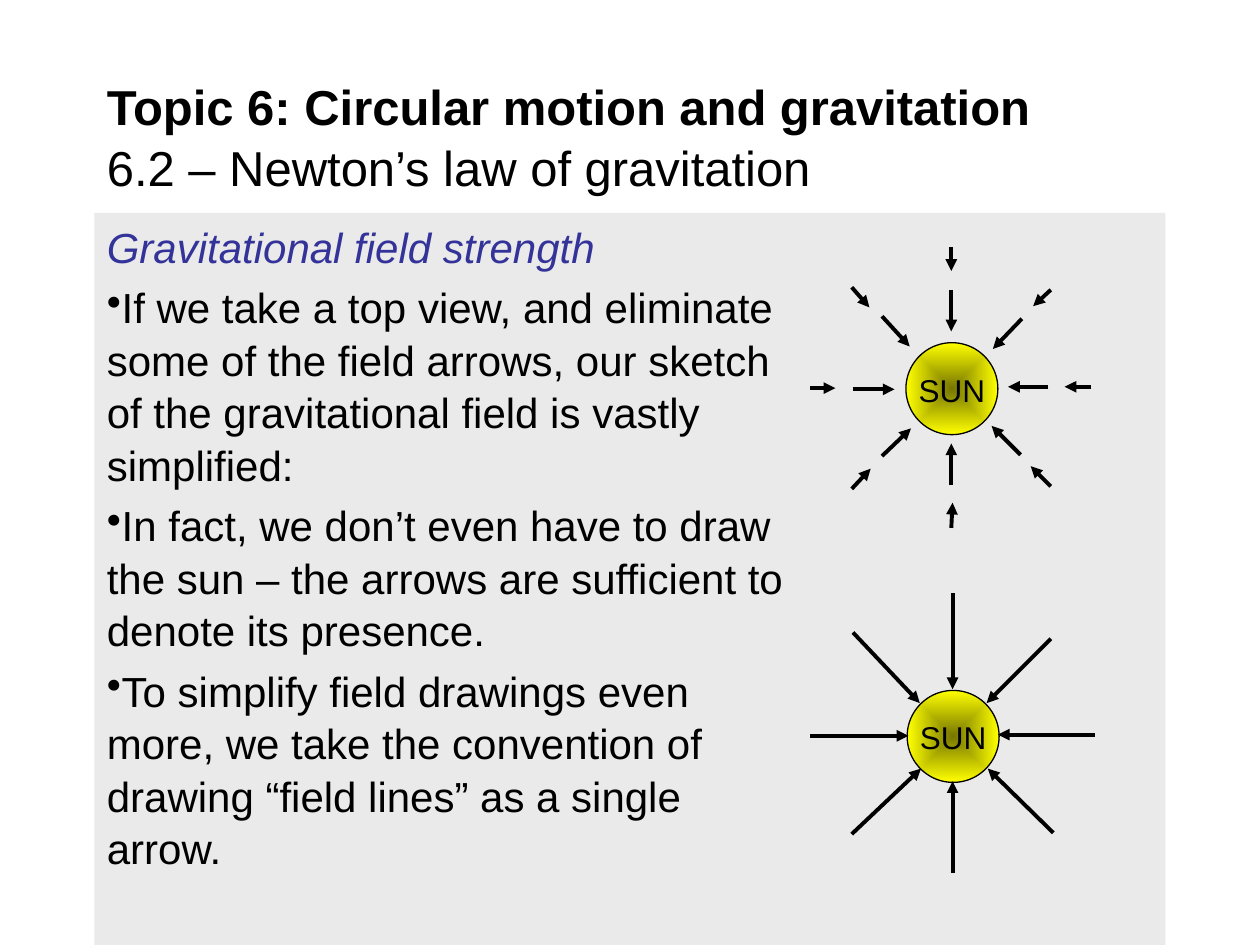
from lxml import etree
from pptx import Presentation
from pptx.dml.color import RGBColor
from pptx.enum.shapes import MSO_CONNECTOR, MSO_SHAPE
from pptx.enum.text import MSO_ANCHOR, PP_ALIGN
from pptx.oxml.ns import qn
from pptx.util import Inches, Pt

RECT, OVAL = MSO_SHAPE.RECTANGLE, MSO_SHAPE.OVAL
STRAIGHT = MSO_CONNECTOR.STRAIGHT
TOP, MIDDLE = MSO_ANCHOR.TOP, MSO_ANCHOR.MIDDLE
LEFT, CENTER = PP_ALIGN.LEFT, PP_ALIGN.CENTER

FONT = "Arial"
COLORS = {"black": "000000", "heading": "333399", "panel": "EAEAEA",
          "sun_core": "767600", "sun_edge": "FFFF00"}
LINE_SPACING = 1.04

TITLE = "Topic 6: Circular motion and gravitation"
SUBTITLE = "6.2 – Newton’s law of gravitation"
HEADING = "Gravitational field strength"
POINTS = [
    "If we take a top view, and eliminate some of the field arrows, "
    "our sketch of the gravitational field is vastly simplified:",
    "In fact, we don’t even have to draw the sun – the arrows are "
    "sufficient to denote its presence.",
    "To simplify field drawings even more, we take the convention of "
    "drawing “field lines” as a single arrow.",
]

# Arrows as (tail x, tail y, tip x, tip y), clockwise from the top
INNER_ARROWS = [
    (7.55, 2.3, 7.55, 2.63), (8.11, 2.53, 7.88, 2.77),
    (8.32, 3.07, 8, 3.07), (8.1, 3.61, 7.87, 3.38),
    (7.55, 3.85, 7.55, 3.52), (7, 3.62, 7.23, 3.4),
    (6.77, 3.09, 7.1, 3.09), (7, 2.51, 7.22, 2.75),
]
OUTER_ARROWS = [
    (7.55, 1.96, 7.55, 2.15), (8.34, 2.3, 8.2, 2.43),
    (8.66, 3.07, 8.45, 3.07), (8.34, 3.86, 8.18, 3.7),
    (7.55, 4.19, 7.56, 3.99), (6.76, 3.88, 6.91, 3.72),
    (6.43, 3.08, 6.63, 3.08), (6.76, 2.28, 6.9, 2.44),
]
FIELD_LINES = [
    (7.56, 4.71, 7.56, 5.47), (8.34, 5.07, 7.83, 5.58),
    (8.69, 5.83, 7.92, 5.83), (8.36, 6.61, 7.84, 6.1),
    (7.56, 6.93, 7.56, 6.2), (6.76, 6.62, 7.31, 6.1),
    (6.43, 5.84, 7.21, 5.84), (6.77, 5.02, 7.3, 5.58),
]


class Deck:
    """Holds the style and the current slide."""

    def __init__(self, slide):
        self.shapes = slide.shapes

    def color(self, name):
        return RGBColor.from_string(COLORS[name])

    def style(self, p, size, color="black", bold=False, italic=False, align=LEFT):
        p.alignment = align
        p.line_spacing = LINE_SPACING
        p.font.name, p.font.size = FONT, Pt(size)
        p.font.bold, p.font.italic = bold, italic
        p.font.color.rgb = self.color(color)

    def title(self, x, y, w, h, lines):
        tf = self.shapes.add_textbox(Inches(x), Inches(y), Inches(w), Inches(h)).text_frame
        tf.word_wrap = True
        tf.vertical_anchor = MIDDLE
        for i, line in enumerate(lines):
            p = tf.add_paragraph() if i else tf.paragraphs[0]
            p.text = line
            self.style(p, 28, bold=i == 0)

    def panel(self, x, y, w, h, heading, points, text_right):
        s = self.shapes.add_shape(RECT, Inches(x), Inches(y), Inches(w), Inches(h))
        s.shadow.inherit = False
        s.fill.solid()
        s.fill.fore_color.rgb = self.color("panel")
        s.line.fill.background()
        tf = s.text_frame
        tf.word_wrap = True
        tf.vertical_anchor = TOP
        tf.margin_right = Inches(x + w - text_right)
        p = tf.paragraphs[0]
        p.text = heading
        self.style(p, 24, "heading", italic=True)
        for point in points:
            p = tf.add_paragraph()
            p.text = point
            self.style(p, 24)
            p.space_before = Pt(4.8)
            pPr = p._p.get_or_add_pPr()
            pPr.set("marL", "0")
            pPr.set("indent", "0")
            bullet = etree.Element(qn("a:buChar"), char="•")
            pPr.find(qn("a:spcBef")).addnext(bullet)

    def sun(self, x, y, size=0.73):
        s = self.shapes.add_shape(OVAL, Inches(x), Inches(y), Inches(size), Inches(size))
        s.shadow.inherit = False
        s.fill.gradient()
        for stop, name in zip(s.fill.gradient_stops, ("sun_core", "sun_edge")):
            stop.color.rgb = self.color(name)
        # Spread the gradient from the centre outwards
        grad = s._element.spPr.find(qn("a:gradFill"))
        lin = grad.find(qn("a:lin"))
        spread = etree.Element(qn("a:path"), path="shape")
        etree.SubElement(spread, qn("a:fillToRect"),
                         dict.fromkeys("ltrb", "50000"))
        grad.replace(lin, spread)
        s.line.color.rgb = self.color("black")
        s.line.width = Pt(0.75)
        tf = s.text_frame
        tf.word_wrap = False
        tf.vertical_anchor = MIDDLE
        p = tf.paragraphs[0]
        p.text = "SUN"
        self.style(p, 18, align=CENTER)

    def arrow(self, *ends):
        s = self.shapes.add_connector(STRAIGHT, *map(Inches, ends))
        s.line.color.rgb = self.color("black")
        s.line.width = Pt(2.25)
        etree.SubElement(s.line._get_or_add_ln(), qn("a:tailEnd"), type="triangle")
        etree.SubElement(s._element.spPr, qn("a:effectLst"))


def main():
    prs = Presentation()
    prs.slide_width, prs.slide_height = Inches(10), Inches(7.5)
    deck = Deck(prs.slides.add_slide(prs.slide_layouts[6]))

    # Text
    deck.panel(0.75, 1.69, 8.5, 5.81, HEADING, POINTS, text_right=6.25)
    deck.title(0.75, 0.58, 8.5, 0.98, (TITLE, SUBTITLE))

    # Sun with separate field arrows, then with field lines
    deck.sun(7.19, 2.72)
    deck.sun(7.2, 5.48)
    for ends in INNER_ARROWS + OUTER_ARROWS + FIELD_LINES:
        deck.arrow(*ends)

    prs.save("out.pptx")


if __name__ == "__main__":
    main()
